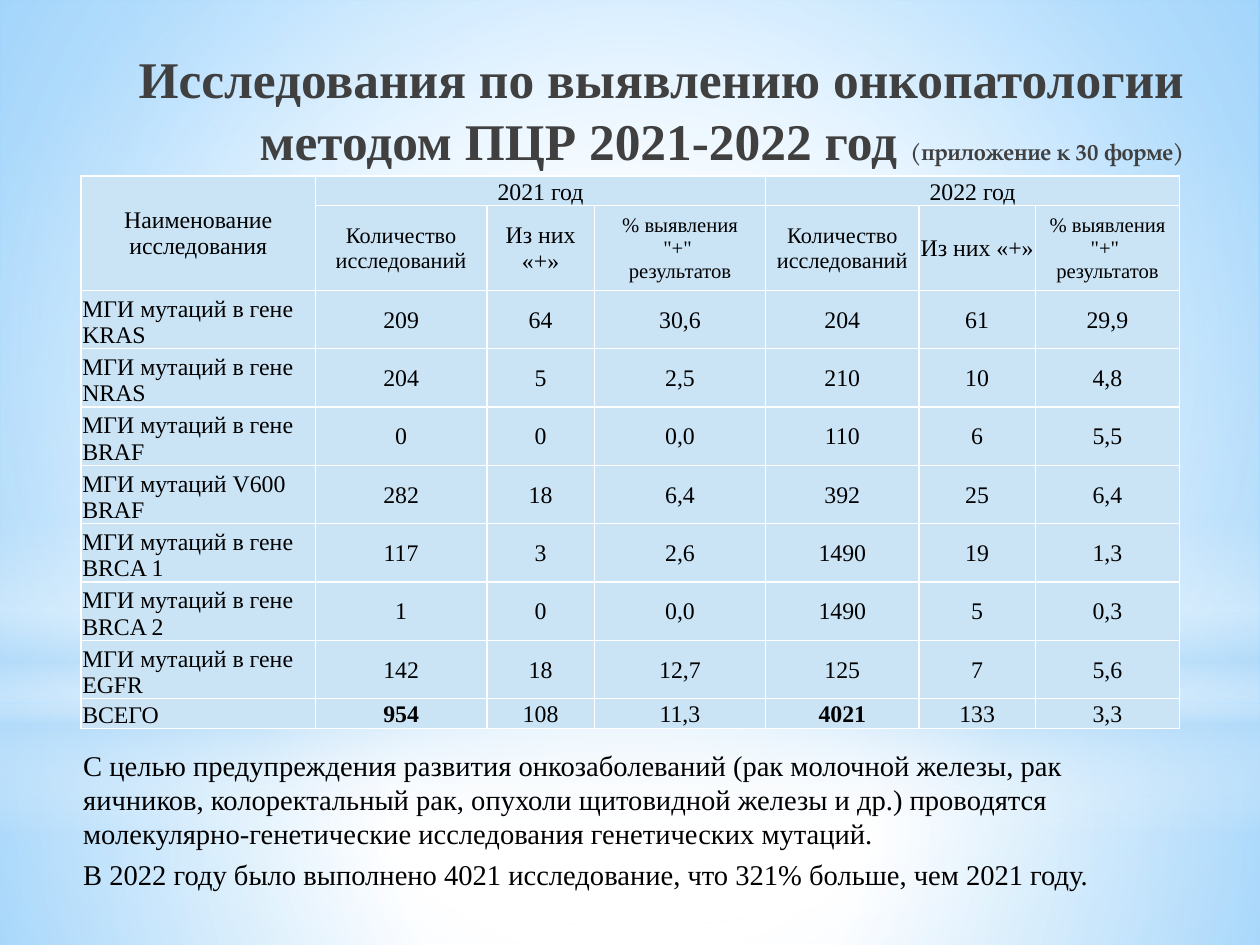
import lxml.etree
import pptx
import pptx.dml.color
import pptx.enum.shapes
import pptx.enum.text
import pptx.oxml
import pptx.oxml.ns
import pptx.util

Inches = pptx.util.Inches
RGBColor = pptx.dml.color.RGBColor
ALIGN = pptx.enum.text.PP_ALIGN
ANCHOR = pptx.enum.text.MSO_ANCHOR
SHAPE = pptx.enum.shapes.MSO_SHAPE
qn = pptx.oxml.ns.qn

BLACK = RGBColor(0x00, 0x00, 0x00)
TITLE_GREY = RGBColor(0x40, 0x40, 0x40)
CELL_BLUE = RGBColor(0xCA, 0xE4, 0xF6)
WHITE = RGBColor(0xFF, 0xFF, 0xFF)
SKY = RGBColor(0x63, 0xBC, 0xFF)
PALE_SKY = RGBColor(0xB4, 0xDC, 0xFA)
SERIF = "Times New Roman"


def write(paragraph, text, size=15, font=SERIF, color=BLACK, bold=False, align=ALIGN.LEFT):
    paragraph.alignment = align
    run = paragraph.add_run()
    run.text = text
    run.font.size = pptx.util.Pt(size)
    run.font.name = font
    run.font.bold = bold
    run.font.color.rgb = color


def set_gradient(owner, fill, stops, center=None):
    fill.gradient()
    gradient = next(owner.iter(qn("a:gradFill")))
    for child in list(gradient):
        gradient.remove(child)
    stop_list = lxml.etree.SubElement(gradient, qn("a:gsLst"))
    for position, color, opacity in stops:
        stop = lxml.etree.SubElement(stop_list, qn("a:gs"), pos=str(position * 1000))
        tint = lxml.etree.SubElement(stop, qn("a:srgbClr"), val=str(color))
        lxml.etree.SubElement(tint, qn("a:alpha"), val=str(opacity * 1000))
    if center:
        radial = lxml.etree.SubElement(gradient, qn("a:path"), {"path": "circle"})
        edges = {side: str(value * 1000) for side, value in zip("ltrb", center)}
        lxml.etree.SubElement(radial, qn("a:fillToRect"), edges)
    else:
        lxml.etree.SubElement(gradient, qn("a:lin"), ang="5400000", scaled="0")


deck = pptx.Presentation()
deck.slide_width = Inches(28 / 2.54)
deck.slide_height = Inches(21 / 2.54)
slide = deck.slides.add_slide(deck.slide_layouts[6])

set_gradient(slide.element, slide.background.fill,
             [(0, WHITE, 100), (42, WHITE, 100), (100, SKY, 100)], (24, 44, 24, 12))

MIDDLE = (50, 50, 50, 50)
glows = [
    (SHAPE.RECTANGLE, 6.16, 2.11, [(0, WHITE, 91), (37, WHITE, 76), (100, PALE_SKY, 79)], MIDDLE),
    (SHAPE.RECTANGLE, 0, 6.16, [(0, WHITE, 89), (48, WHITE, 62), (100, PALE_SKY, 79)], MIDDLE),
    (SHAPE.RECTANGLE, 4.54, 2.76, [(0, WHITE, 0), (29, WHITE, 30), (45, PALE_SKY, 40),
                                   (55, WHITE, 26), (65, PALE_SKY, 60), (100, WHITE, 0)], None),
    (SHAPE.OVAL, 1.93, 6.16, [(0, WHITE, 100), (56, WHITE, 0)], MIDDLE),
]
for outline, top, height, stops, center in glows:
    glow = slide.shapes.add_shape(outline, 0, Inches(top), deck.slide_width, Inches(height))
    glow.shadow.inherit = False
    glow.line.fill.background()
    set_gradient(glow.element, glow.fill, stops, center)

title = slide.shapes.add_textbox(Inches(0.55), Inches(0.35), Inches(9.92), Inches(1.38)).text_frame
title.word_wrap = True
title.margin_left = title.margin_right = Inches(0.11)
title.margin_top = title.margin_bottom = Inches(0.06)
heading = title.paragraphs[0]
title_format = dict(color=TITLE_GREY, bold=True, align=ALIGN.RIGHT)
write(heading, "Исследования по выявлению онкопатологии методом ПЦР 2021-2022 год ", size=32.4, **title_format)
write(heading, "(приложение к 30 форме)", size=14.4, font="TeX Gyre Pagella", **title_format)

measures = ["Количество исследований", "Из них «+»", "% выявления\n\"+\" \nрезультатов"]
measure_sizes = [14, 15, 13]
rows = [
    ["Наименование исследования", "2021 год", "", "", "2022 год", "", ""],
    [""] + measures * 2,
    ["МГИ мутаций в гене KRAS", "209", "64", "30,6", "204", "61", "29,9"],
    ["МГИ мутаций в гене NRAS", "204", "5", "2,5", "210", "10", "4,8"],
    ["МГИ мутаций в гене BRAF", "0", "0", "0,0", "110", "6", "5,5"],
    ["МГИ мутаций V600 BRAF", "282", "18", "6,4", "392", "25", "6,4"],
    ["МГИ мутаций в гене BRCA 1", "117", "3", "2,6", "1490", "19", "1,3"],
    ["МГИ мутаций в гене BRCA 2", "1", "0", "0,0", "1490", "5", "0,3"],
    ["МГИ мутаций в гене EGFR", "142", "18", "12,7", "125", "7", "5,6"],
    ["ВСЕГО", "954", "108", "11,3", "4021", "133", "3,3"],
]
column_widths = [2.05, 1.5, 0.94, 1.5, 1.34, 1.02, 1.26]
row_heights = [0.26, 0.74] + [0.51] * 7 + [0.26]
total_row = len(rows) - 1

results = slide.shapes.add_table(len(rows), len(column_widths), Inches(0.71), Inches(1.54),
                                 Inches(9.61), Inches(4.83)).table
results.first_row = False
results.horz_banding = False
for column, width in zip(results.columns, column_widths):
    column.width = Inches(width)
for row, height in zip(results.rows, row_heights):
    row.height = Inches(height)
results.cell(0, 0).merge(results.cell(1, 0))
results.cell(0, 1).merge(results.cell(0, 3))
results.cell(0, 4).merge(results.cell(0, 6))

for r, values in enumerate(rows):
    for c, value in enumerate(values):
        cell = results.cell(r, c)
        cell.margin_left = cell.margin_right = cell.margin_top = Inches(0.01)
        cell.margin_bottom = 0
        is_study_name = c == 0 and r > 1
        is_year = r == 0 and c > 0
        cell.vertical_anchor = ANCHOR.BOTTOM if is_study_name or is_year else ANCHOR.MIDDLE
        cell_format = dict(
            size=measure_sizes[(c - 1) % 3] if r == 1 else 15,
            bold=r == total_row and c in (1, 4),
            align=ALIGN.LEFT if is_study_name else ALIGN.CENTER,
        )
        for i, line in enumerate(value.split("\n") if value else []):
            paragraph = cell.text_frame.add_paragraph() if i else cell.text_frame.paragraphs[0]
            write(paragraph, line, **cell_format)
        properties = cell._tc.get_or_add_tcPr()
        for side in ("a:lnL", "a:lnR", "a:lnT", "a:lnB"):
            border = lxml.etree.SubElement(properties, qn(side), w="12700")
            paint = lxml.etree.SubElement(border, qn("a:solidFill"))
            lxml.etree.SubElement(paint, qn("a:srgbClr"), val=str(WHITE))
        cell.fill.solid()
        cell.fill.fore_color.rgb = CELL_BLUE

conclusions = [
    (6.49, 1.35, "С целью предупреждения развития онкозаболеваний (рак молочной железы, рак яичников, "
                 "колоректальный рак, опухоли щитовидной железы и др.) проводятся "
                 "молекулярно-генетические исследования генетических мутаций."),
    (7.45, 0.4, "В 2022 году было выполнено 4021 исследование, что 321% больше, чем 2021 году."),
]
for top, height, text in conclusions:
    conclusion = slide.shapes.add_textbox(Inches(0.63), Inches(top), Inches(9.76), Inches(height)).text_frame
    conclusion.word_wrap = True
    write(conclusion.paragraphs[0], text, size=18)

deck.save("out.pptx")
